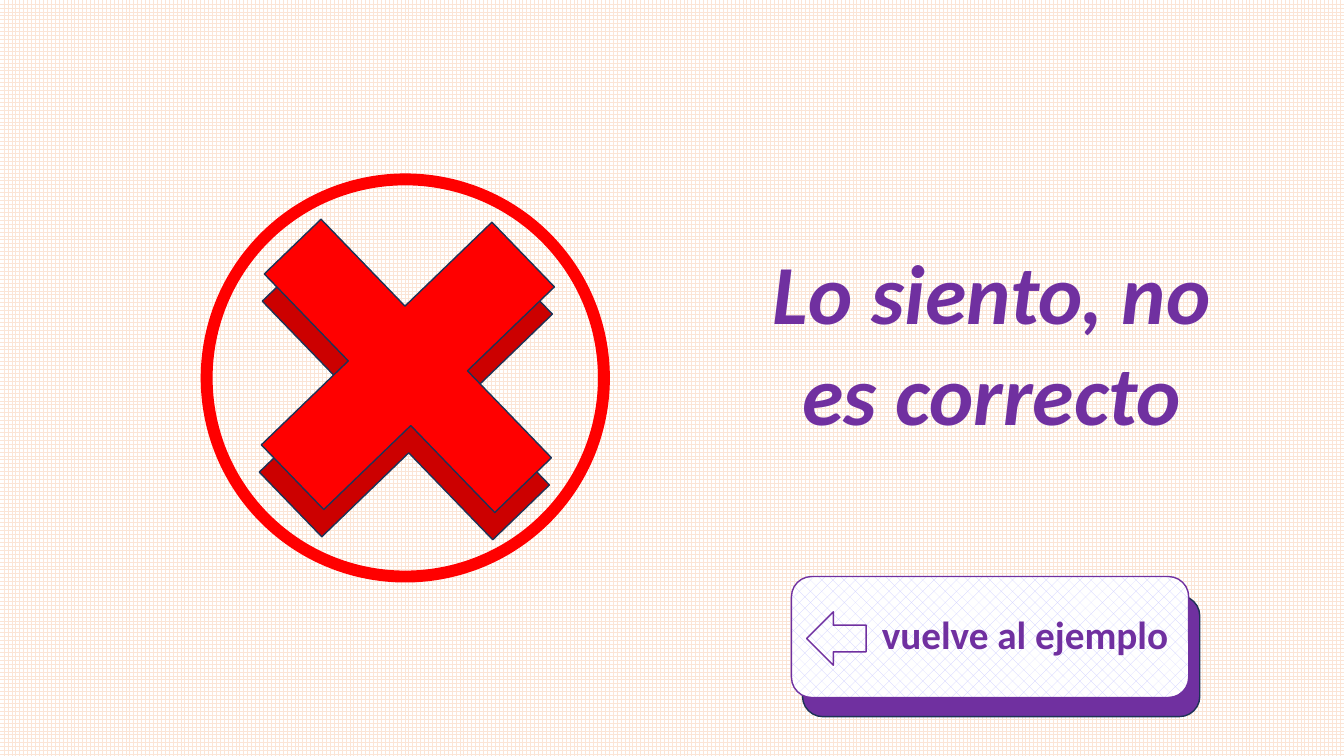
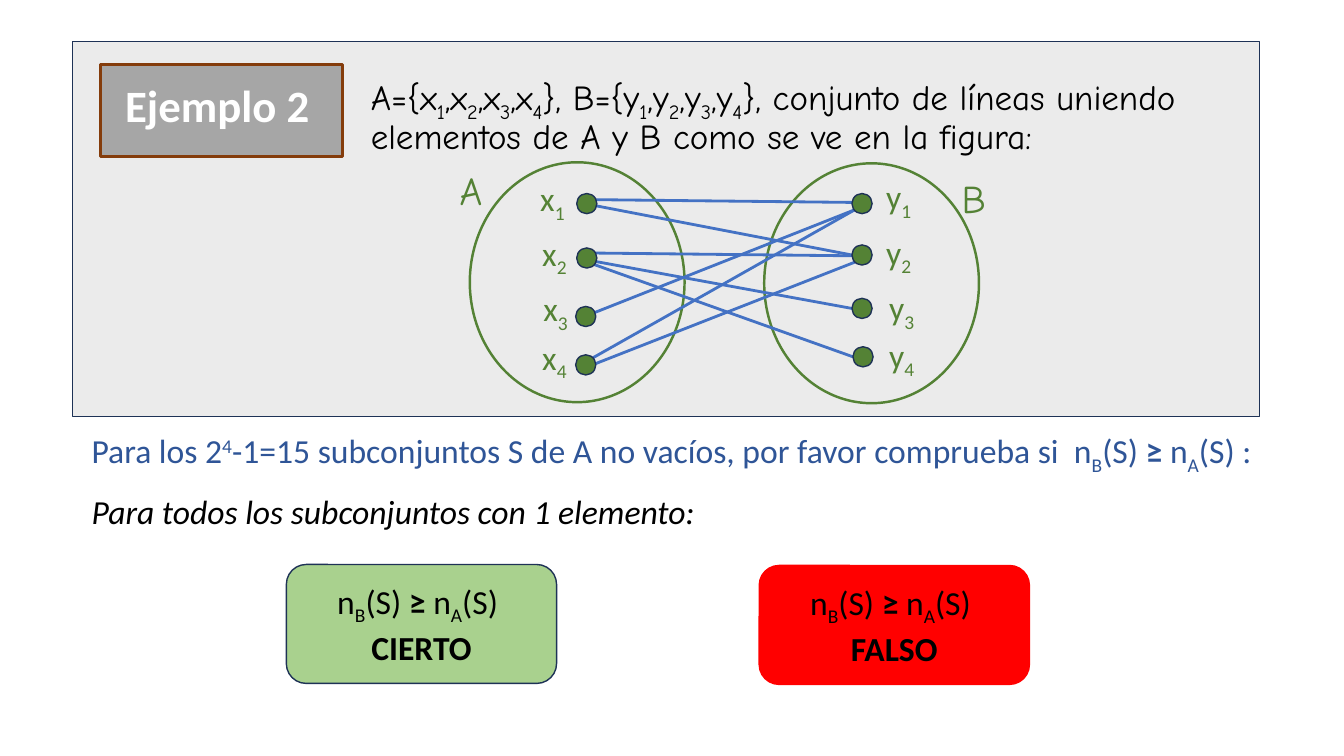
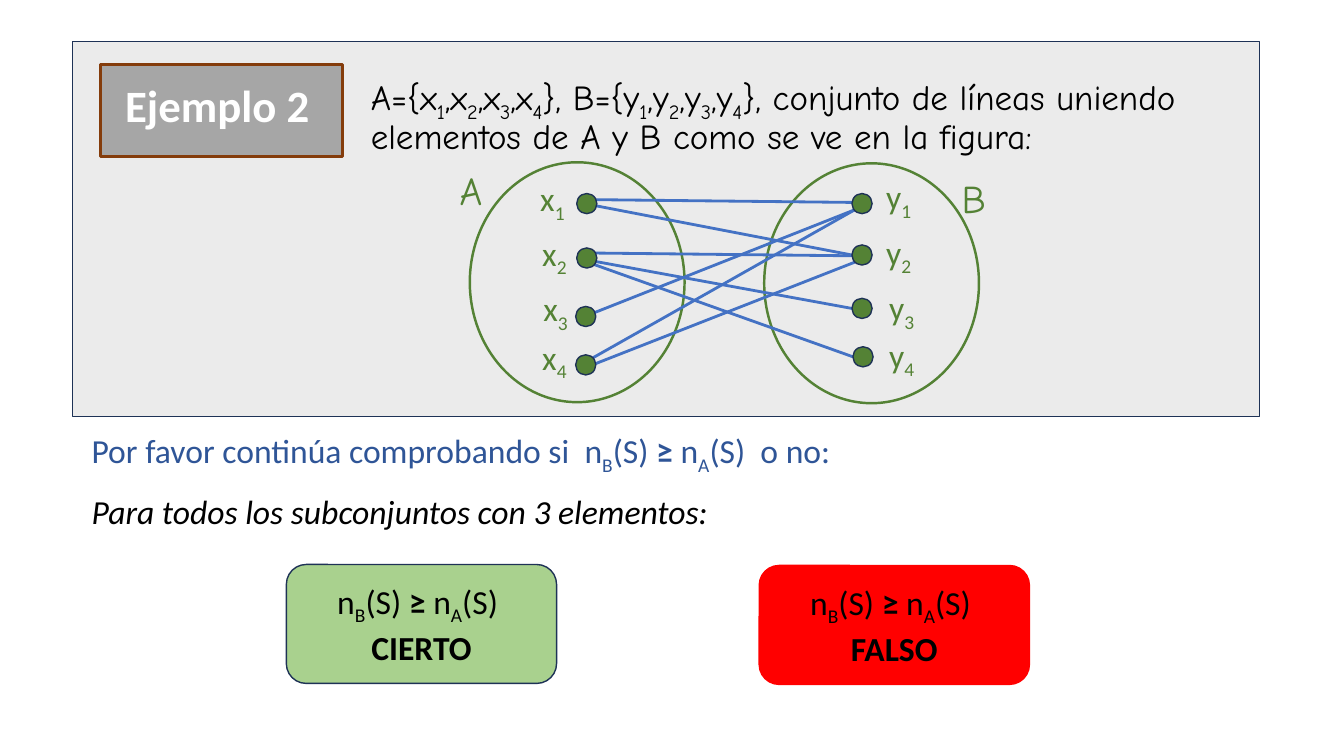
import pptx
import pptx.dml.color
import pptx.enum.dml
import pptx.enum.shapes
import pptx.enum.text
import pptx.oxml.ns
import pptx.util

Inches = pptx.util.Inches
Pt = pptx.util.Pt
SHAPE = pptx.enum.shapes.MSO_SHAPE
ALIGN = pptx.enum.text.PP_ALIGN
ANCHOR = pptx.enum.text.MSO_ANCHOR
PATTERN = pptx.enum.dml.MSO_PATTERN
qn = pptx.oxml.ns.qn

BASELINES = {"_": "-25000", "^": "30000"}


def rgb(value):
    return pptx.dml.color.RGBColor.from_string(value)


def split_marks(text):
    """Yield (shift, bold, text): _ and ^ shift the next character, * toggles bold."""
    parts, shift, bold = [], "", False
    for char in text:
        if char in BASELINES:
            shift = char
        elif char == "*":
            bold = not bold
        else:
            if parts and parts[-1][:2] == [shift, bold]:
                parts[-1][2] += char
            else:
                parts.append([shift, bold, char])
            shift = ""
    return parts


class Deck:
    FONT, HAND = "Calibri", "Comic Neue"
    PURPLE, GREEN, RED = "7030A0", "548235", "FF0000"
    NAVY, BLUE, BLACK, WHITE = "1E3256", "4472C4", "000000", "FFFFFF"

    def __init__(self):
        self.prs = pptx.Presentation()
        self.prs.slide_width = Inches(13.33)
        self.prs.slide_height = Inches(7.5)
        self.s = None

    def paint(self, fill, color):
        """Fill with a hex colour, a (pattern, fore, back) tuple, or nothing."""
        if color is None:
            fill.background()
        elif isinstance(color, tuple):
            fill.patterned()
            fill.pattern = color[0]
            fill.fore_color.rgb = rgb(color[1])
            fill.back_color.rgb = rgb(color[2])
        else:
            fill.solid()
            fill.fore_color.rgb = rgb(color)

    def slide(self, background):
        self.s = self.prs.slides.add_slide(self.prs.slide_layouts[6])
        self.paint(self.s.background.fill, background)

    def shape(self, kind, at, fill=None, line=NAVY, width=1, rotation=0, adj=None, alpha=None):
        sp = self.s.shapes.add_shape(kind, *map(Inches, at))
        sp.shadow.inherit = False
        sp.rotation = rotation
        self.paint(sp.fill, fill)
        sp.line.color.rgb = rgb(line)
        sp.line.width = Pt(width)
        if adj is not None:
            sp.adjustments[0] = adj
        if alpha is not None:
            clr = sp._element.spPr.find(qn("a:solidFill"))[0]
            clr.append(clr.makeelement(qn("a:alpha"), {"val": str(alpha * 1000)}))
        return sp

    def put_text(self, sp, lines, size=24, color=BLACK, font=FONT, bold=None, italic=None,
                 align=ALIGN.LEFT, spacing=None, before=None, anchor=ANCHOR.TOP,
                 insets=(0.1, 0.05)):
        tf = sp.text_frame
        tf.word_wrap = True
        tf.vertical_anchor = anchor
        tf.margin_left, tf.margin_top = map(Inches, insets)
        for i, line in enumerate(lines):
            p = tf.paragraphs[0] if i == 0 else tf.add_paragraph()
            p.alignment = align
            p.line_spacing = spacing
            p.space_before = before
            p.font.size, p.font.name = Pt(size), font
            p.font.bold, p.font.italic = bold, italic
            p.font.color.rgb = rgb(color)
            for shift, strong, text in split_marks(line):
                r = p.add_run()
                r.text = text
                if strong:
                    r.font.bold = True
                if shift:
                    r.font._element.set("baseline", BASELINES[shift])
        return tf

    def text(self, at, lines, wrap=True, grow=True, **style):
        tf = self.put_text(self.s.shapes.add_textbox(*map(Inches, at)), lines, **style)
        tf.word_wrap = wrap
        if grow:
            tf.auto_size = pptx.enum.text.MSO_AUTO_SIZE.SHAPE_TO_FIT_TEXT

    def line(self, x1, y1, x2, y2):
        cx = self.s.shapes.add_connector(
            pptx.enum.shapes.MSO_CONNECTOR.STRAIGHT, *map(Inches, (x1, y1, x2, y2)))
        cx.line.color.rgb = rgb(self.BLUE)
        cx.line.width = Pt(2)
        sppr = cx._element.spPr
        sppr.append(sppr.makeelement(qn("a:effectLst"), {}))


def wrong_answer(d):
    d.slide((PATTERN.LARGE_GRID, "FBE5D6", d.WHITE))
    d.text((7.54, 2.34, 4.78, 2.12), ["Lo siento, no ", "es correcto "], wrap=False,
           size=60, color=d.PURPLE, bold=True, italic=True, align=ALIGN.CENTER)

    # Circled cross
    d.shape(SHAPE.FLOWCHART_CONNECTOR, (2.05, 1.78, 3.94, 3.94), line=d.RED, width=8.5)
    for x, y, fill in ((2.38, 2.31, "CC0000"), (2.4, 2.04, d.RED)):
        d.shape(SHAPE.CROSS, (x, y, 3.29, 3.18), fill, rotation=46, adj=0.377)

    # Return button
    d.shape(SHAPE.ROUNDED_RECTANGLE, (7.96, 5.91, 3.94, 1.2), d.PURPLE)
    button = d.shape(SHAPE.ROUNDED_RECTANGLE, (7.85, 5.72, 3.94, 1.2),
                     (PATTERN.PERCENT_25, "CCCCFF", d.WHITE), d.PURPLE)
    d.put_text(button, ["vuelve al ejemplo"], size=28, color=d.PURPLE, bold=True,
               align=ALIGN.CENTER, spacing=0.9, before=Pt(10), anchor=ANCHOR.MIDDLE,
               insets=(0.79, 0.05))
    d.shape(SHAPE.LEFT_ARROW, (8, 6.07, 0.59, 0.53), line=d.PURPLE)


# Left and top of each element's label and dot, and the ends of the joining lines
LABELS = {"x": ((5.26, 1.72), (5.28, 2.26), (5.29, 2.81), (5.28, 3.29)),
          "y": ((8.69, 1.7), (8.69, 2.25), (8.72, 2.8), (8.72, 3.27))}
DOTS = ((5.72, 1.92), (5.72, 2.46), (5.71, 3.04), (5.71, 3.52),
        (8.45, 1.92), (8.45, 2.43), (8.45, 2.96), (8.46, 3.44))
JOINS = ((5.82, 1.98, 8.62, 2.01), (5.85, 2.03, 8.45, 2.53), (5.85, 2.51, 8.65, 2.54),
         (5.72, 2.56, 8.45, 3.06), (5.88, 2.62, 8.46, 3.54), (5.85, 3.12, 8.48, 2.08),
         (5.85, 3.63, 8.48, 2.6), (5.88, 3.55, 8.48, 2.08))
CONDITION = "n_B(S) *≥ *n_A(S) "


def example(d, request, subsets):
    d.slide(d.WHITE)

    # Statement panel
    d.shape(SHAPE.RECTANGLE, (0.72, 0.41, 11.77, 3.72), "D9D9D9", alpha=50)
    d.text((3.58, 0.71, 9.03, 1.24),
           ["A={x_1,x_2,x_3,x_4}, B={y_1,y_2,y_3,y_4}, conjunto de líneas uniendo "
            "elementos de A y B como se ve en la figura:"],
           grow=False, size=25, font=d.HAND, spacing=0.9, before=Pt(10))
    tag = d.shape(SHAPE.RECTANGLE, (1, 0.64, 2.4, 0.91), "A6A6A6", "843C0B", 2)
    d.put_text(tag, ["Ejemplo 2"], size=32, color=d.WHITE, bold=True, spacing=0.9,
               insets=(0.24, 0.19))

    # Sets and their elements
    for x, y in ((4.66, 1.61), (7.58, 1.62)):
        d.shape(SHAPE.OVAL, (x, y, 2.13, 2.38), line=d.GREEN, width=1.75)
    for name, x, y in (("A", 4.46, 1.6), ("B", 9.44, 1.68)):
        d.text((x, y, 0.47, 0.57), [name], wrap=False, size=28, color=d.GREEN, font=d.HAND)
    for name, places in LABELS.items():
        for i, (x, y) in enumerate(places, 1):
            d.text((x, y, 0.46, 0.5), [f"{name}_{i}"], wrap=False, color=d.GREEN)
    for join in JOINS:
        d.line(*join)
    for x, y in DOTS:
        d.shape(SHAPE.OVAL, (x, y, 0.2, 0.2), d.GREEN)

    # Question and answers
    d.text((0.81, 4.22, 11.9, 0.91), [request], color="2F5597")
    d.text((0.81, 4.82, 11.22, 0.5), [f"Para todos los subconjuntos con {subsets}:"], italic=True)
    for x, y, fill, line, answer in ((2.84, 5.6, "A9D18E", d.NAVY, "CIERTO"),
                                     (7.53, 5.61, d.RED, d.RED, "FALSO")):
        box = d.shape(SHAPE.ROUNDED_RECTANGLE, (x, y, 2.68, 1.18), fill, line)
        d.put_text(box, [CONDITION, f"*{answer}*"], align=ALIGN.CENTER, anchor=ANCHOR.MIDDLE)


def main():
    d = Deck()
    wrong_answer(d)
    example(d, "Para los 2^4-1=15 subconjuntos S de A no vacíos, por favor comprueba si  "
               f"{CONDITION}:", "1 elemento")
    example(d, f"Por favor continúa comprobando si  {CONDITION} o no:", "3 elementos")
    d.prs.save("out.pptx")


if __name__ == "__main__":
    main()
